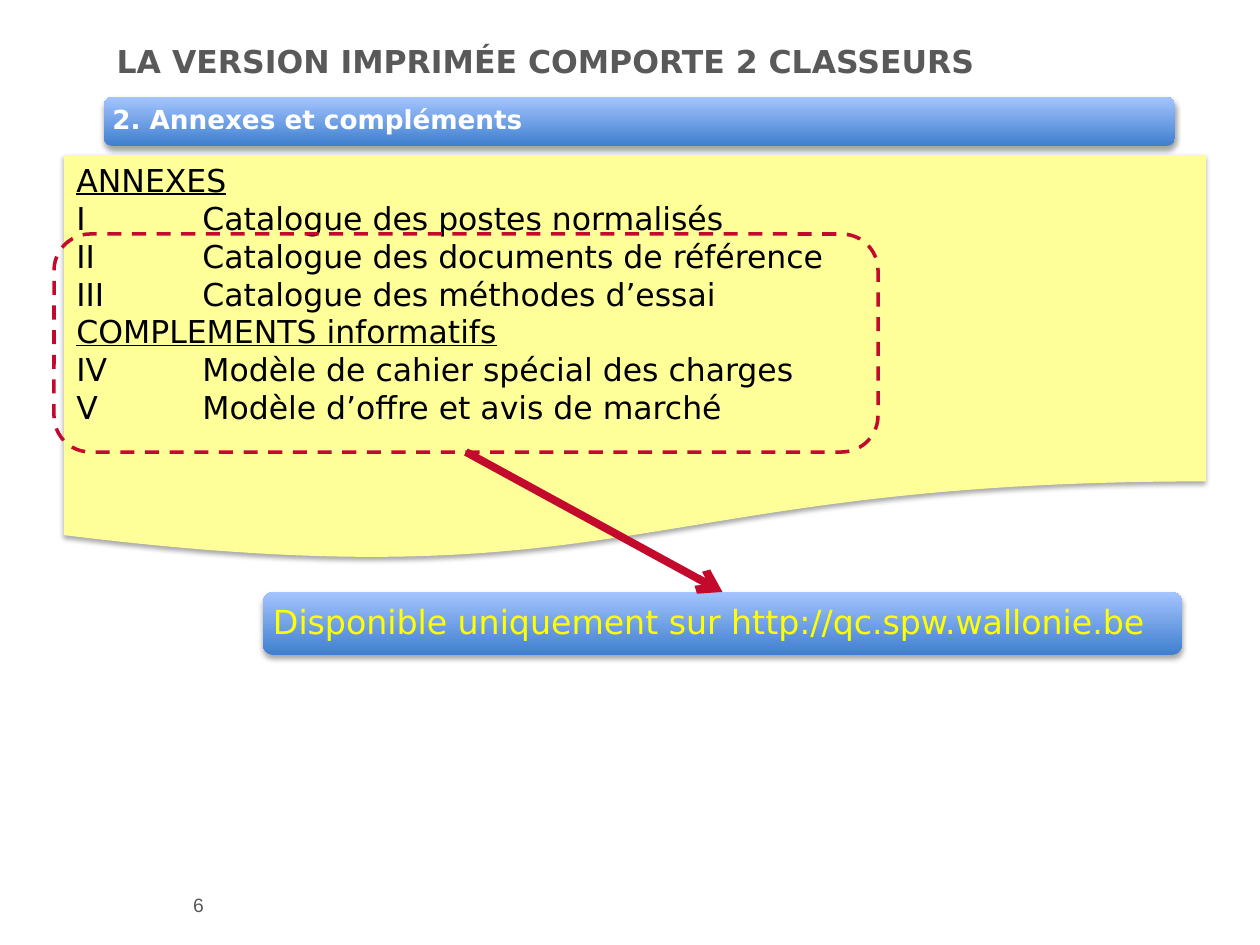
from lxml import etree
from pptx import Presentation
from pptx.dml.color import RGBColor
from pptx.enum.dml import MSO_LINE
from pptx.enum.shapes import MSO_CONNECTOR, MSO_SHAPE
from pptx.enum.text import MSO_ANCHOR, PP_ALIGN
from pptx.oxml import parse_xml
from pptx.oxml.ns import nsdecls, qn
from pptx.util import Pt

ROUNDED, DOCUMENT = MSO_SHAPE.ROUNDED_RECTANGLE, MSO_SHAPE.FLOWCHART_DOCUMENT
TOP, MIDDLE, LEFT = MSO_ANCHOR.TOP, MSO_ANCHOR.MIDDLE, PP_ALIGN.LEFT
BOTTOM_SITE, TOP_SITE = 2, 0

TITLE = "LA VERSION IMPRIMÉE COMPORTE 2 CLASSEURS"
SECTION = "2. Annexes et compléments"
NOTICE = "Disponible uniquement sur http://qc.spw.wallonie.be"
PAGE_NUMBER = "6"
CONTENTS = [
    ("ANNEXES", [
        ("I", "Catalogue des postes normalisés"),
        ("II", "Catalogue des documents de référence"),
        ("III", "Catalogue des méthodes d’essai"),
    ]),
    ("COMPLEMENTS informatifs", [
        ("IV", "Modèle de cahier spécial des charges"),
        ("V", "Modèle d’offre et avis de marché"),
    ]),
]

COLORS = {
    "grey": "595959", "white": "FFFFFF", "black": "000000", "yellow": "FFFF00",
    "paper": "FFFF99", "red": "C3092C", "blue": "3F7FCE", "light blue": "A4C4FF",
}
FONT, NUMBER_FONT = "DejaVu Sans", "Arial"
EMU_PER_PX = 914400 / 126

# left, top, width, height in px
TITLE_BOX = (104, 36, 1071, 188)
SECTION_BOX = (104, 97, 1071, 49)
PAPER_BOX = (64, 155, 1142, 407)
FRAME_BOX = (54, 234, 824, 218)
NOTICE_BOX = (263, 592, 919, 63)
NUMBER_BOX = (193, 892, 248, 25)
LABEL_TAB = 126


def px(value):
    return round(value * EMU_PER_PX)


def color(name):
    return RGBColor.from_string(COLORS[name])


def style(paragraph, size, color_name, bold=False, underline=False, name=FONT):
    paragraph.alignment = LEFT
    for run in paragraph.runs:
        font = run.font
        font.name, font.size, font.bold, font.underline = name, Pt(size), bold, underline
        font.color.rgb = color(color_name)


def set_insets(text_frame, horizontal, vertical):
    text_frame.margin_left = text_frame.margin_right = px(horizontal)
    text_frame.margin_top = text_frame.margin_bottom = px(vertical)


def add_tab_stop(paragraph, position):
    tabs = etree.SubElement(paragraph._p.get_or_add_pPr(), qn("a:tabLst"))
    etree.SubElement(tabs, qn("a:tab"), pos=str(px(position)), algn="l")


def add_shape(slide, kind, box):
    shape = slide.shapes.add_shape(kind, *map(px, box))
    shape.shadow.inherit = False
    return shape


def add_soft_shadow(shape):
    effects = shape._element.spPr.find(qn("a:effectLst"))
    effects.append(parse_xml(
        f'<a:outerShdw {nsdecls("a")} blurRad="39400" dist="22900" dir="5400000" rotWithShape="0">'
        f'<a:srgbClr val="{COLORS["black"]}"><a:alpha val="35000"/></a:srgbClr></a:outerShdw>'))


def add_banner(slide, box, text, inset, **text_style):
    banner = add_shape(slide, ROUNDED, box)
    banner.line.fill.background()
    banner.fill.gradient()
    banner.fill.gradient_angle = 90
    for stop, name in zip(banner.fill.gradient_stops, ("blue", "light blue")):
        stop.color.rgb = color(name)
    add_soft_shadow(banner)
    text_frame = banner.text_frame
    text_frame.text = text
    text_frame.vertical_anchor = MIDDLE
    set_insets(text_frame, inset, inset)
    paragraph = text_frame.paragraphs[0]
    paragraph.line_spacing = 0.9
    style(paragraph, **text_style)
    return banner


def add_paper(slide):
    paper = add_shape(slide, DOCUMENT, PAPER_BOX)
    paper.line.fill.background()
    paper.fill.solid()
    paper.fill.fore_color.rgb = color("paper")
    add_soft_shadow(paper)
    lines = []
    for heading, entries in CONTENTS:
        lines.append((heading, True))
        lines += [(f"{numeral}\t{label}", False) for numeral, label in entries]
    text_frame = paper.text_frame
    text_frame.word_wrap = False
    text_frame.vertical_anchor = TOP
    text_frame.text = "\n".join(text for text, _ in lines)
    for paragraph, (_, is_heading) in zip(text_frame.paragraphs, lines):
        if not is_heading:
            add_tab_stop(paragraph, LABEL_TAB)
        style(paragraph, 18, "black", underline=is_heading)


def add_arrow(slide, start, end):
    arrow = slide.shapes.add_connector(MSO_CONNECTOR.STRAIGHT, 0, 0, 0, 0)
    arrow.begin_connect(start, BOTTOM_SITE)
    arrow.end_connect(end, TOP_SITE)
    arrow.line.width = Pt(4.5)
    arrow.line.color.rgb = color("red")
    etree.SubElement(arrow.line._get_or_add_ln(), qn("a:tailEnd"), type="arrow")
    etree.SubElement(arrow._element.spPr, qn("a:effectLst"))


def main():
    presentation = Presentation()
    presentation.slide_width, presentation.slide_height = px(1260), px(945)
    slide = presentation.slides.add_slide(presentation.slide_layouts[5])

    title = slide.shapes.title
    title.left, title.top, title.width, title.height = map(px, TITLE_BOX)
    title.text_frame.text = TITLE
    title.text_frame.vertical_anchor = TOP
    style(title.text_frame.paragraphs[0], 18, "grey", bold=True)

    add_banner(slide, SECTION_BOX, SECTION, 6, size=15, color_name="white", bold=True)

    number = slide.shapes.add_textbox(*map(px, NUMBER_BOX)).text_frame
    number.text = PAGE_NUMBER
    number.word_wrap = True
    number.vertical_anchor = MIDDLE
    set_insets(number, 0, 6)
    style(number.paragraphs[0], 11, "grey", name=NUMBER_FONT)

    add_paper(slide)

    frame = add_shape(slide, ROUNDED, FRAME_BOX)
    frame.fill.background()
    frame.line.color.rgb = color("red")
    frame.line.width = Pt(2)
    frame.line.dash_style = MSO_LINE.DASH

    notice = add_banner(slide, NOTICE_BOX, NOTICE, 7, size=19, color_name="yellow")
    add_arrow(slide, frame, notice)
    presentation.save("out.pptx")


if __name__ == "__main__":
    main()
